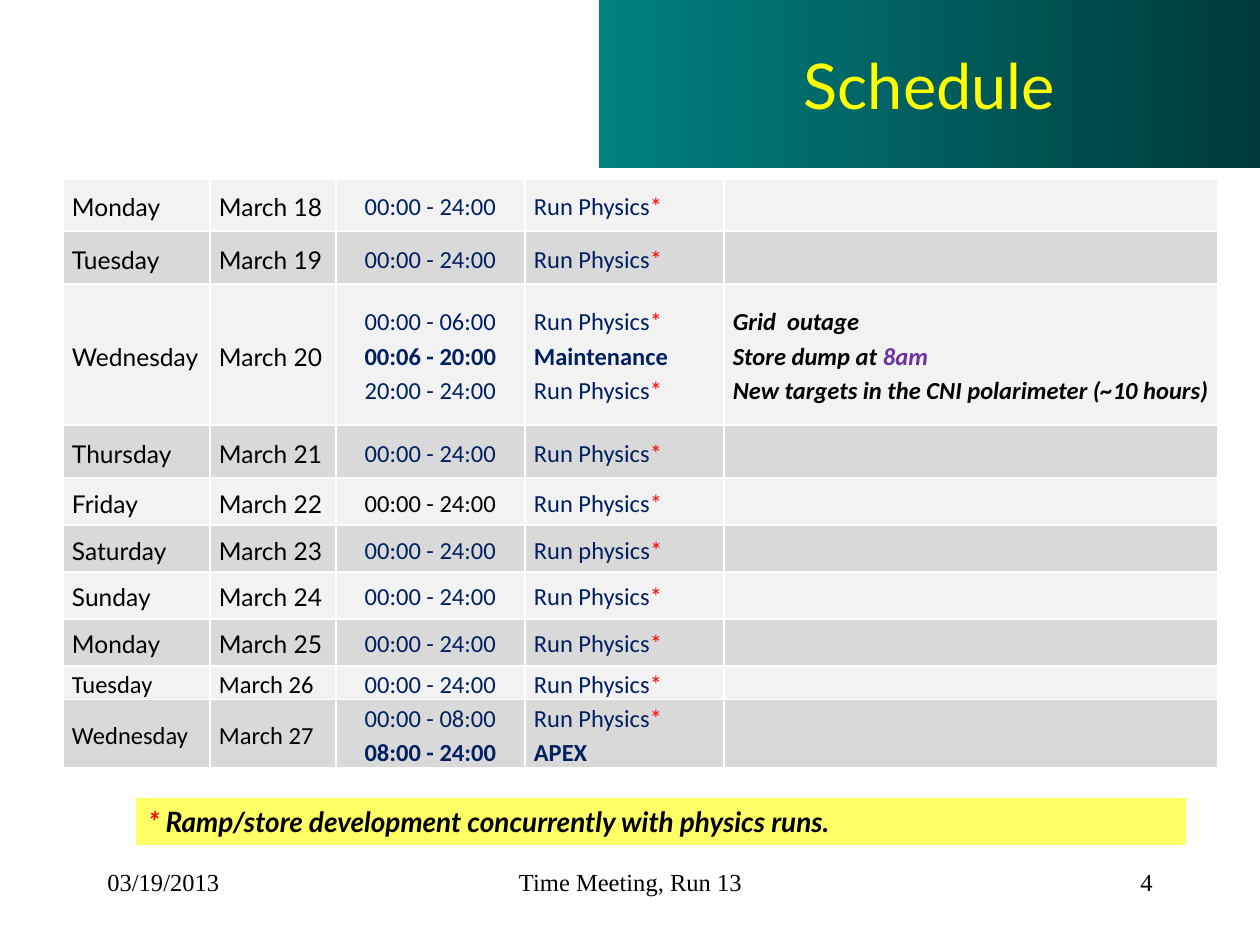
from dataclasses import dataclass

from lxml.etree import SubElement
from pptx import Presentation
from pptx.dml.color import RGBColor
from pptx.enum.shapes import MSO_SHAPE
from pptx.enum.text import MSO_ANCHOR, MSO_AUTO_SIZE, PP_ALIGN
from pptx.oxml import parse_xml
from pptx.oxml.ns import nsdecls, qn
from pptx.util import Emu, Pt

PX = 914400 // 126
BLACK, NAVY, RED, PURPLE = "000000", "002060", "FF0000", "7030A0"
WHITE, YELLOW, PALE_YELLOW = "FFFFFF", "FFFF00", "FFFF66"
TEAL, DARK_TEAL = "008080", "003B3B"
BANDS = ("F2F2F2", "D9D9D9")
LATO, CALIBRI, TIMES = "Lato", "Calibri", "Times New Roman"


def rgb(value):
    return RGBColor.from_string(value)


@dataclass
class Line:
    runs: tuple
    bold: bool = False
    italic: bool = False


def plain(text, color=BLACK, bold=False, italic=False):
    return Line(((text, color),), bold, italic)


def starred(text):
    return Line(((text, NAVY), ("*", RED)))


def note(*runs):
    return Line(runs, True, True)


class SlideBuilder:
    """Draws styled elements on the current slide, measured in px."""

    def __init__(self, slide, margin=9, line_spacing=1.15, border=1):
        self.slide = slide
        self.margin = Emu(margin * PX)
        self.line_spacing = line_spacing
        self.border = Pt(border)

    def box(self, left, top, width, height):
        return [Emu(value * PX) for value in (left, top, width, height)]

    def set_line(self, paragraph, line, font, size, align=PP_ALIGN.LEFT):
        paragraph.alignment = align
        paragraph.font.name = font
        paragraph.font.size = Pt(size)
        paragraph.font.bold = line.bold
        paragraph.font.italic = line.italic
        base_color = line.runs[0][1]
        paragraph.font.color.rgb = rgb(base_color)
        for text, color in line.runs:
            run = paragraph.add_run()
            run.text = text
            if color != base_color:
                run.font.color.rgb = rgb(color)

    def title(self, text, *box):
        shape = self.slide.shapes.title
        shape.left, shape.top, shape.width, shape.height = self.box(*box)
        shape.fill.gradient()
        shape.fill.gradient_angle = 0
        for stop, color in zip(shape.fill.gradient_stops, (TEAL, DARK_TEAL)):
            stop.color.rgb = rgb(color)
        frame = shape.text_frame
        frame.auto_size = MSO_AUTO_SIZE.NONE
        frame.vertical_anchor = MSO_ANCHOR.MIDDLE
        self.set_line(frame.paragraphs[0], plain(text, YELLOW), LATO, 36, PP_ALIGN.CENTER)

    def footer(self, text, align, *box):
        frame = self.slide.shapes.add_textbox(*self.box(*box)).text_frame
        frame.word_wrap = True
        self.set_line(frame.paragraphs[0], plain(text), TIMES, 14, align)

    def banner(self, line, *box):
        shape = self.slide.shapes.add_shape(MSO_SHAPE.RECTANGLE, *self.box(*box))
        shape.shadow.inherit = False
        shape.fill.solid()
        shape.fill.fore_color.rgb = rgb(PALE_YELLOW)
        shape.line.fill.background()
        frame = shape.text_frame
        frame.word_wrap = True
        frame.vertical_anchor = MSO_ANCHOR.TOP
        self.set_line(frame.paragraphs[0], line, LATO, 16)

    def cell(self, cell, lines, fill, font, align):
        cell.fill.solid()
        cell.fill.fore_color.rgb = rgb(fill)
        cell.vertical_anchor = MSO_ANCHOR.MIDDLE
        cell.margin_left = cell.margin_right = self.margin
        cell.margin_top = cell.margin_bottom = 0
        properties = cell._tc.get_or_add_tcPr()
        for index, side in enumerate("LRTB"):
            properties.insert(index, parse_xml(
                f'<a:ln{side} {nsdecls("a")} w="{self.border}"><a:solidFill>'
                f'<a:srgbClr val="{WHITE}"/></a:solidFill></a:ln{side}>'))
        frame = cell.text_frame
        if not lines:
            SubElement(frame.paragraphs[0]._p, qn("a:endParaRPr"), sz="1400")
        for index, line in enumerate(lines):
            paragraph = frame.add_paragraph() if index else frame.paragraphs[0]
            paragraph.line_spacing = self.line_spacing
            self.set_line(paragraph, line, font, 14, align)

    def schedule(self, days, widths, left, top):
        heights = [day[0] for day in days]
        box = self.box(left, top, sum(widths), sum(heights))
        table = self.slide.shapes.add_table(len(days), len(widths), *box).table
        table.first_row = table.horz_banding = False
        for column, width in zip(table.columns, widths):
            column.width = Emu(width * PX)
        for index, (height, day_font, day, date, times, activities, notes) in enumerate(days):
            table.rows[index].height = Emu(height * PX)
            columns = (
                ([plain(day)], day_font, PP_ALIGN.LEFT),
                ([plain(date)], day_font, PP_ALIGN.LEFT),
                (times, CALIBRI, PP_ALIGN.CENTER),
                (activities, CALIBRI, PP_ALIGN.LEFT),
                (notes, CALIBRI, PP_ALIGN.LEFT),
            )
            for position, (lines, font, align) in enumerate(columns):
                self.cell(table.cell(index, position), lines, BANDS[index % 2], font, align)


def full_day(height, day, date, font=LATO, color=NAVY, activity="Run Physics"):
    return height, font, day, date, [plain("00:00 - 24:00", color)], [starred(activity)], []


DAYS = [
    full_day(52, "Monday", "March 18"),
    full_day(53, "Tuesday", "March 19"),
    (141, LATO, "Wednesday", "March 20",
     [plain("00:00 - 06:00", NAVY), plain("00:06 - 20:00", NAVY, True), plain("20:00 - 24:00", NAVY)],
     [starred("Run Physics"), plain("Maintenance", NAVY, True), starred("Run Physics")],
     [note(("Grid  outage", BLACK)),
      note(("Store dump at ", BLACK), ("8am", PURPLE)),
      note(("New targets in the CNI polarimeter (~10 hours)", BLACK))]),
    full_day(53, "Thursday", "March 21"),
    full_day(47, "Friday", "March 22", color=BLACK),
    full_day(47, "Saturday", "March 23", activity="Run physics"),
    full_day(47, "Sunday", "March 24"),
    full_day(47, "Monday", "March 25"),
    full_day(32, "Tuesday", "March 26", font=CALIBRI),
    (64, CALIBRI, "Wednesday", "March 27",
     [plain("00:00 - 08:00", NAVY), plain("08:00 - 24:00", NAVY, True)],
     [starred("Run Physics"), plain("APEX", NAVY, True)], []),
]


def main():
    presentation = Presentation()
    presentation.slide_width, presentation.slide_height = Emu(1260 * PX), Emu(945 * PX)
    builder = SlideBuilder(presentation.slides.add_slide(presentation.slide_layouts[5]))
    builder.title("Schedule", 599, 0, 661, 168)
    builder.footer("03/19/2013", PP_ALIGN.LEFT, 95, 861, 262, 63)
    builder.footer("Time Meeting, Run 13", PP_ALIGN.CENTER, 431, 861, 399, 63)
    builder.footer("4", PP_ALIGN.RIGHT, 903, 861, 262, 63)
    builder.schedule(DAYS, (147, 126, 189, 199, 494), 63, 179)
    builder.banner(note(("*", RED), (" Ramp/store development concurrently with physics runs.", BLACK)),
                   136, 798, 1050, 47)
    presentation.save("out.pptx")


if __name__ == "__main__":
    main()
